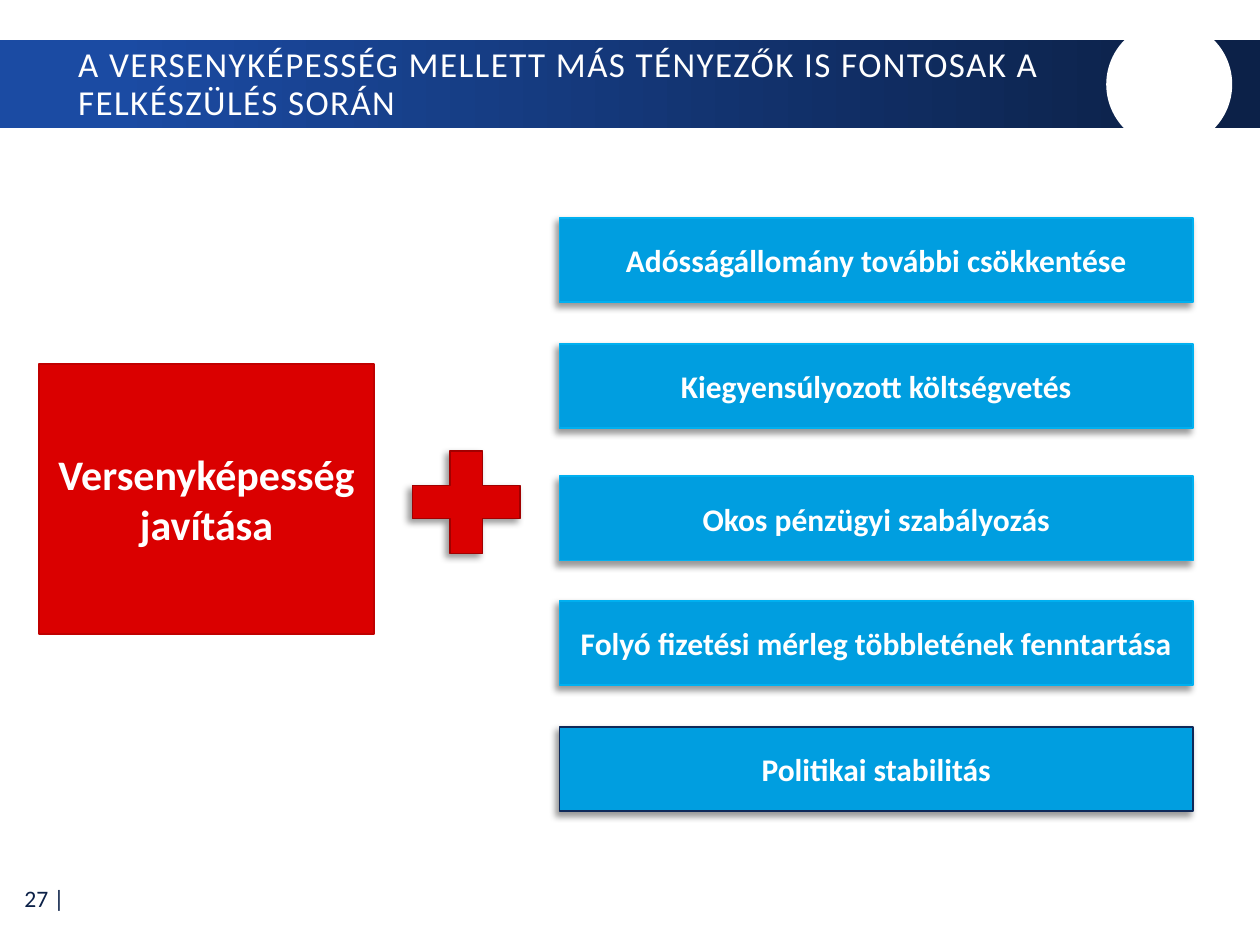
import pptx
import pptx.dml.color
import pptx.enum.shapes
import pptx.enum.text
import pptx.oxml
import pptx.oxml.ns
import pptx.util
from pptx.util import Inches

SHAPE = pptx.enum.shapes.MSO_SHAPE
ALIGN = pptx.enum.text.PP_ALIGN
MIDDLE = pptx.enum.text.MSO_ANCHOR.MIDDLE

NAVY, WHITE, RED, BLUE = "0C2148", "FFFFFF", "DA0000", "009EE0"
SHADOW = (
    '<a:outerShdw %s blurRad="50800" dist="38100" dir="8100000" algn="tr" rotWithShape="0">'
    '<a:srgbClr val="000000"><a:alpha val="40000"/></a:srgbClr></a:outerShdw>'
    % pptx.oxml.ns.nsdecls("a")
)

FACTORS = [
    # top, label, outline
    (1.73, "Adósságállomány további csökkentése", "00B0F0"),
    (2.73, "Kiegyensúlyozott költségvetés", "00B0F0"),
    (3.78, "Okos pénzügyi szabályozás", "00B0F0"),
    (4.77, "Folyó fizetési mérleg többletének fenntartása", "00B0F0"),
    (5.77, "Politikai stabilitás", "0F2959"),
]


def rgb(value):
    return pptx.dml.color.RGBColor.from_string(value)


def apply(obj, values):
    for name, value in values.items():
        setattr(obj, name, value)


class SlideBuilder:
    font = "Calibri"

    def __init__(self, prs):
        self.s = prs.slides.add_slide(prs.slide_layouts[5])

    def label(self, sp, text, size, color=WHITE, bold=False, align=ALIGN.CENTER):
        tf = sp.text_frame
        apply(tf, {"word_wrap": True, "vertical_anchor": MIDDLE,
                   "auto_size": pptx.enum.text.MSO_AUTO_SIZE.NONE})
        p = tf.paragraphs[0]
        p.alignment = align
        r = p.add_run()
        r.text = text
        apply(r.font, {"name": self.font, "size": pptx.util.Pt(size), "bold": bold})
        r.font.color.rgb = rgb(color)
        return p, r

    def shape(self, kind, box, fill, line=None, shadow=False):
        sp = self.s.shapes.add_shape(kind, *map(Inches, box))
        sp.fill.solid()
        sp.fill.fore_color.rgb = rgb(fill)
        if line:
            sp.line.color.rgb = rgb(line)
            sp.line.width = pptx.util.Pt(1)
        else:
            sp.line.fill.background()
        sp.shadow.inherit = False
        if shadow:
            effects = sp._element.spPr.find(pptx.oxml.ns.qn("a:effectLst"))
            effects.append(pptx.oxml.parse_xml(SHADOW))
        return sp

    def gradient_band(self, box, stops):
        sp = self.shape(SHAPE.RECTANGLE, box, NAVY)
        sp.fill.gradient()
        sp.fill.gradient_angle = 0
        for stop, (position, color) in zip(sp.fill.gradient_stops, stops):
            stop.position = position
            stop.color.rgb = rgb(color)

    def title(self, box, text):
        sp = self.s.shapes.title
        apply(sp, dict(zip(("left", "top", "width", "height"), map(Inches, box))))
        p, r = self.label(sp, text, 20, align=ALIGN.LEFT)
        p.line_spacing = 0.9
        r.font._element.set("spc", "80")
        # The band is added after the placeholder, so bring the title to the front
        self.s.shapes._spTree.append(sp._element)

    def page_number(self, box, text):
        sp = self.s.shapes.add_textbox(*map(Inches, box))
        self.label(sp, text, 13.5, NAVY, align=ALIGN.RIGHT)


def main():
    prs = pptx.Presentation()
    apply(prs, {"slide_width": Inches(10), "slide_height": Inches(7.5)})
    slide = SlideBuilder(prs)

    slide.page_number((0.01, 6.94, 0.6, 0.37), "27 |")
    slide.gradient_band((0, 0.32, 10, 0.7), [(0.09, "1B4BA3"), (0.95, NAVY)])
    slide.shape(SHAPE.OVAL, (8.78, 0.17, 1, 1), WHITE)
    slide.title((0.52, 0.34, 8.32, 0.67),
                "A VERSENYKÉPESSÉG MELLETT MÁS TÉNYEZŐK IS FONTOSAK A FELKÉSZÜLÉS SORÁN")

    goal = slide.shape(SHAPE.RECTANGLE, (0.31, 2.89, 2.66, 2.14), RED, "C00000")
    slide.label(goal, "Versenyképesség javítása", 24, bold=True)
    slide.shape(SHAPE.MATH_PLUS, (3.12, 3.43, 1.16, 1.11), RED, "A10000", shadow=True)

    for top, text, outline in FACTORS:
        factor = slide.shape(SHAPE.RECTANGLE, (4.44, top, 5.03, 0.67), BLUE, outline, shadow=True)
        slide.label(factor, text, 18, bold=True)

    prs.save("out.pptx")


if __name__ == "__main__":
    main()
